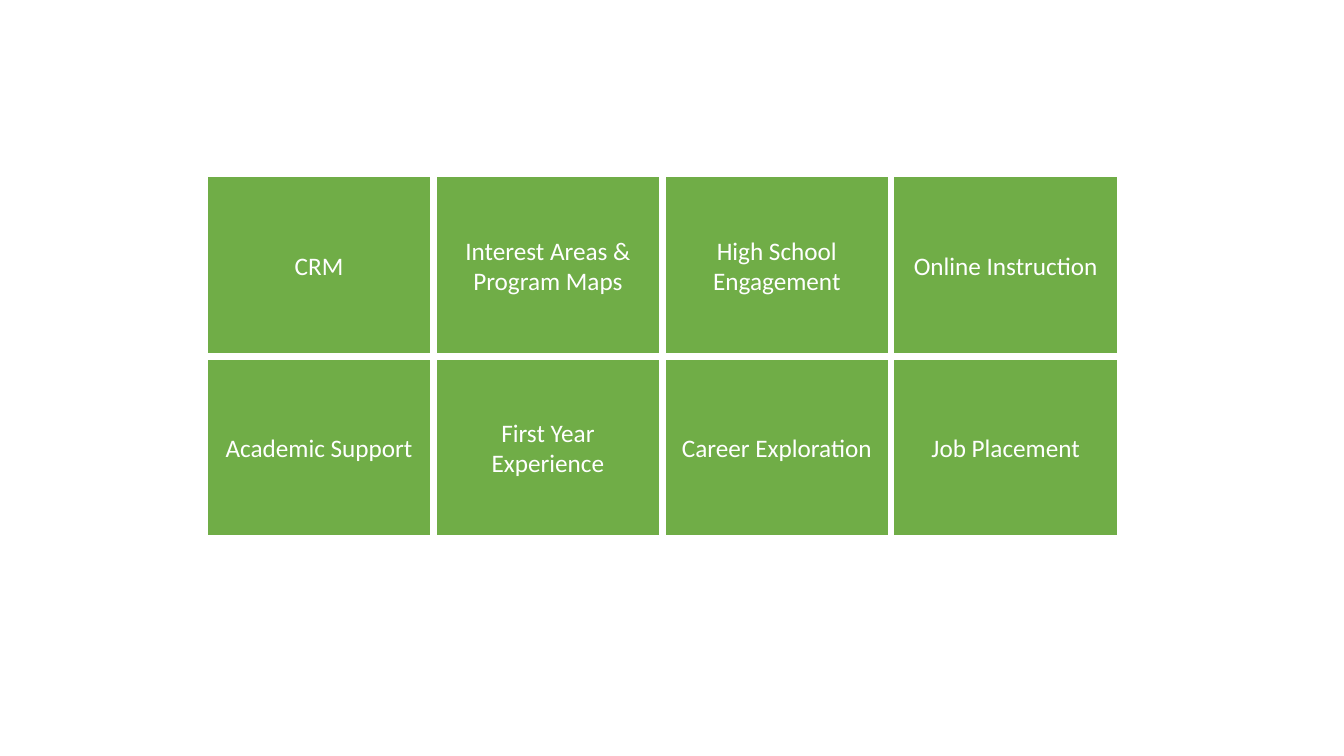
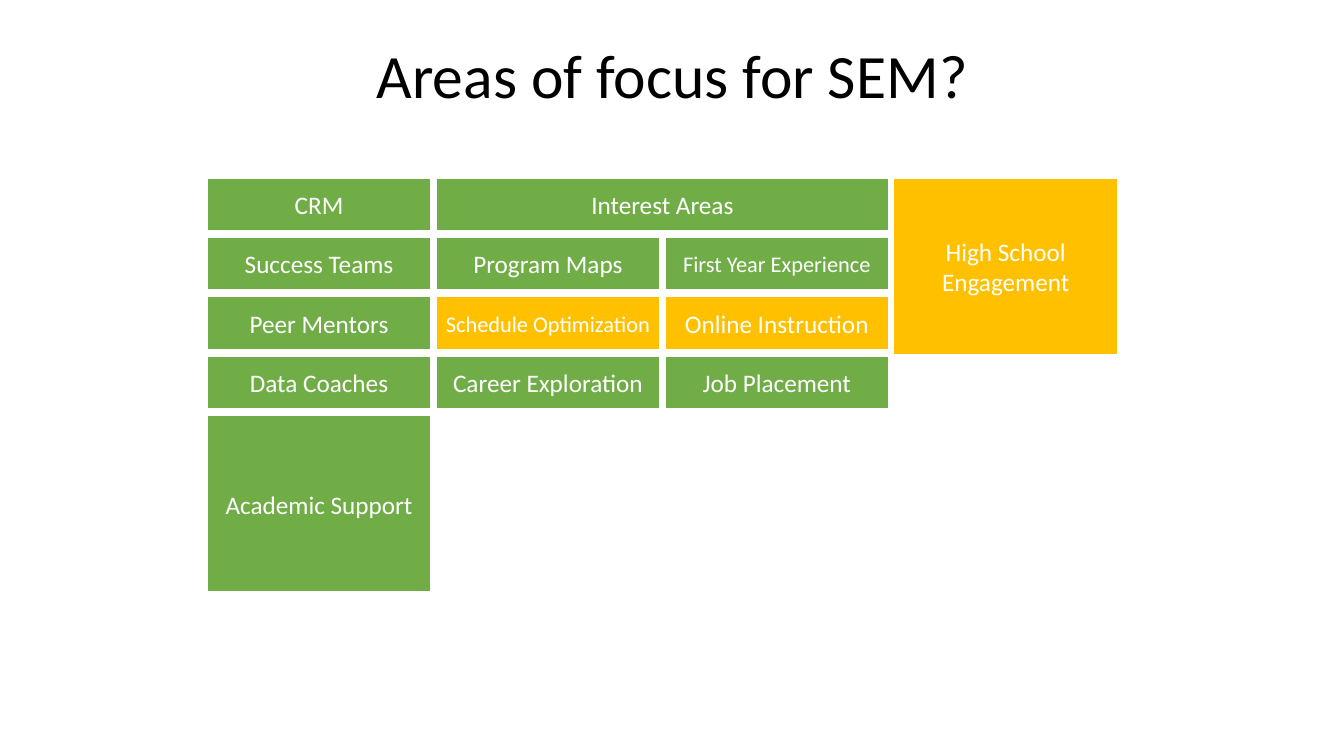
"""Builds two slides of tiles showing areas of focus."""
from pptx import Presentation
from pptx.dml.color import RGBColor
from pptx.enum import shapes, text
from pptx.util import Inches, Pt

FONT = "Calibri"
WHITE, BLACK, GREEN, GOLD = "FFFFFF", "000000", "70AD47", "FFC000"
LEFT, COLUMN = 2.03, 2.27
TALL, SHORT = 1.8, 0.57

OVERVIEW_TOP, OVERVIEW_PITCH = 1.73, 1.81
OVERVIEW = [
    ["CRM", "Interest Areas & Program Maps", "High School Engagement", "Online Instruction"],
    ["Academic Support", "First Year Experience", "Career Exploration", "Job Placement"],
]

TITLE = "Areas of focus for SEM?"
FOCUS_TOP, FOCUS_PITCH = 1.74, 0.59
FOCUS = [
    ("CRM", 0, 0, {}),
    ("Success Teams", 0, 1, {}),
    ("Peer Mentors", 0, 2, {}),
    ("Data Coaches", 0, 3, {}),
    ("Academic Support", 0, 4, {"height": TALL}),
    ("Interest Areas", 1, 0, {"columns": 2}),
    ("Program Maps", 1, 1, {}),
    ("Schedule Optimization", 1, 2, {"fill": GOLD, "size": 16}),
    ("Career Exploration", 1, 3, {}),
    ("First Year Experience", 2, 1, {"size": 16}),
    ("Online Instruction", 2, 2, {"fill": GOLD}),
    ("Job Placement", 2, 3, {}),
    ("High School Engagement", 3, 0, {"height": TALL, "fill": GOLD}),
]


def color(value):
    return RGBColor.from_string(value)


def write(box, words, size, ink, anchor):
    frame = box.text_frame
    frame.word_wrap = True
    frame.vertical_anchor = anchor
    para = frame.paragraphs[0]
    para.alignment = text.PP_ALIGN.CENTER
    span = para.add_run()
    span.text = words
    span.font.name = FONT
    span.font.size = Pt(size)
    span.font.color.rgb = color(ink)
    return para


def add_tile(page, words, column, top, height=SHORT, columns=1, fill=GREEN, size=18):
    box = page.shapes.add_shape(
        shapes.MSO_SHAPE.RECTANGLE, Inches(LEFT + column * COLUMN), Inches(top),
        Inches(columns * COLUMN), Inches(height))
    box.shadow.inherit = False
    box.fill.solid()
    box.fill.fore_color.rgb = color(fill)
    box.line.color.rgb = color(WHITE)
    box.line.width = Pt(4.5)
    write(box, words, size, WHITE, text.MSO_ANCHOR.MIDDLE)


def add_title(page, words):
    box = page.shapes.add_textbox(Inches(0.92), Inches(0.4), Inches(11.5), Inches(1.45))
    para = write(box, words, 44, BLACK, text.MSO_ANCHOR.TOP)
    para.line_spacing = 0.9


def main():
    deck = Presentation()
    deck.slide_width, deck.slide_height = Inches(13.33), Inches(7.5)
    blank = deck.slide_layouts[6]

    overview = deck.slides.add_slide(blank)
    for row, names in enumerate(OVERVIEW):
        for column, name in enumerate(names):
            add_tile(overview, name, column, OVERVIEW_TOP + row * OVERVIEW_PITCH, TALL)

    focus = deck.slides.add_slide(blank)
    add_title(focus, TITLE)
    for name, column, row, style in FOCUS:
        add_tile(focus, name, column, FOCUS_TOP + row * FOCUS_PITCH, **style)

    deck.save("out.pptx")


if __name__ == "__main__":
    main()
